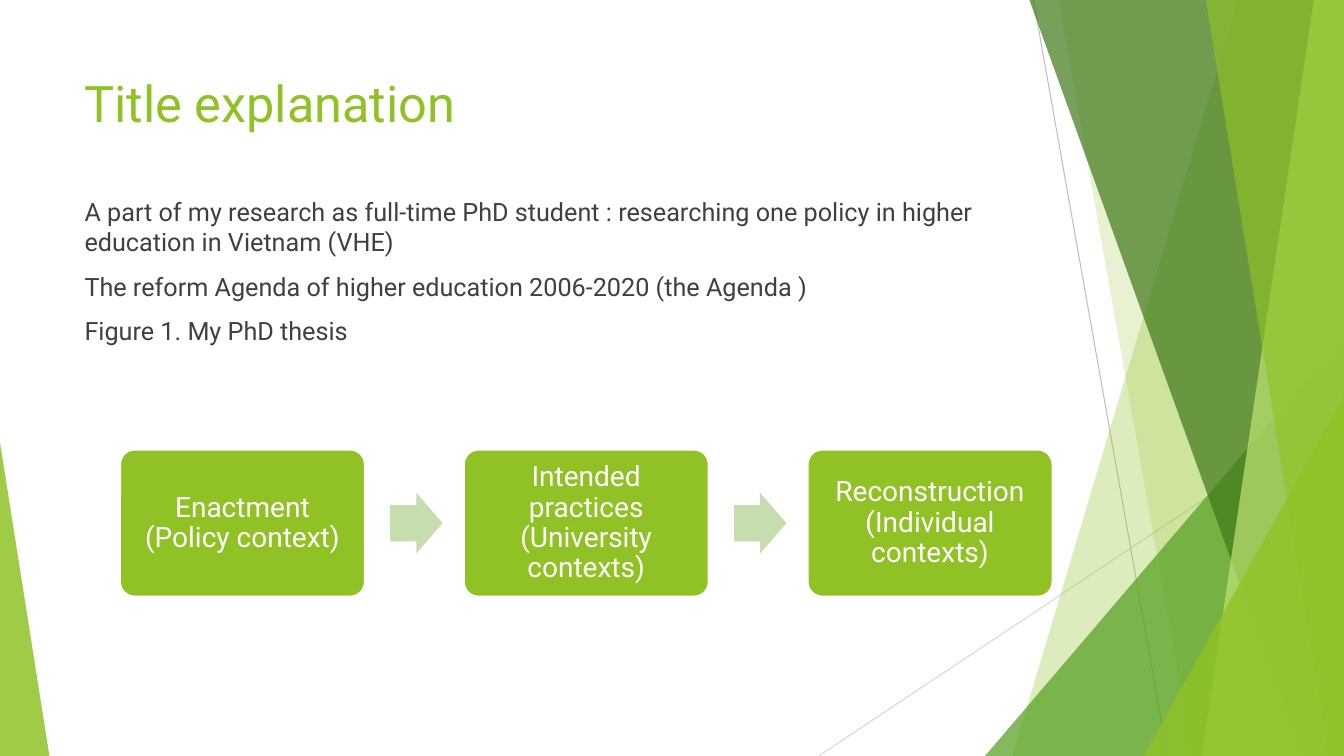
import pptx
import pptx.util
import pptx.dml.color
import pptx.enum.shapes
import pptx.enum.text
import pptx.oxml.ns
import lxml.etree

Inches = pptx.util.Inches
Pt = pptx.util.Pt
SHAPE = pptx.enum.shapes.MSO_SHAPE
ALIGN = pptx.enum.text.PP_ALIGN
ANCHOR = pptx.enum.text.MSO_ANCHOR
qn = pptx.oxml.ns.qn


def paint(fmt, color, alpha=100):
    """Solid colour for a fill, with opacity in percent."""
    fmt.solid()
    fmt.fore_color.rgb = pptx.dml.color.RGBColor.from_string(color)
    if alpha < 100:
        clr = fmt._xPr.find(".//" + qn("a:srgbClr"))
        lxml.etree.SubElement(clr, qn("a:alpha")).set("val", str(alpha * 1000))


def write(s, lines, size, color, frame, para):
    """Fill a shape with paragraphs, using dicts of frame and paragraph formats."""
    tf = s.text_frame
    for name, value in frame.items():
        setattr(tf, name, value)
    for i, line in enumerate(lines):
        p = tf.paragraphs[0] if i == 0 else tf.add_paragraph()
        for name, value in para.items():
            setattr(p, name, value)
        r = p.add_run()
        r.text = line
        for name, value in {"name": "Roboto", "size": Pt(size)}.items():
            setattr(r.font, name, value)
        paint(r.font.fill, color)


prs = pptx.Presentation()
prs.slide_width, prs.slide_height = Inches(13.33), Inches(7.5)
slide = prs.slides.add_slide(prs.slide_layouts[6])
shapes = slide.shapes

# Thin background lines
for x1, y1, x2, y2, color in [(10.25, 0, 11.58, 7.5, "BFBFBF"),
                              (13.33, 4.03, 8.12, 7.5, "D9D9D9")]:
    s = shapes.add_connector(pptx.enum.shapes.MSO_CONNECTOR.STRAIGHT,
                             Inches(x1), Inches(y1), Inches(x2), Inches(y2))
    s.line.width = Pt(0.75)
    paint(s.line.fill, color)
    lxml.etree.SubElement(s._element.spPr, qn("a:effectLst"))

# Green facets: bands give top and bottom x of their left edge and run to the
# right slide edge; triangles give left, top, width, height and apex position
facets = [
    ("band", (12.28, 10.04), "90C226", 30),
    ("band", (10.5, 11.83), "90C226", 20),
    ("triangle", (9.77, 3.33, 3.56, 4.17, 1), "54A021", 72),
    ("band", (10.21, 12.91), "3F7819", 70),
    ("band", (13.03, 11.92), "C0E474", 70),
    ("band", (11.96, 13.18), "90C226", 65),
    ("triangle", (11.34, 3.93, 1.99, 3.57, 1), "90C226", 80),
    ("triangle", (0, 4.39, 0.49, 3.11, 0), "90C226", 85),
]
for kind, geometry, color, alpha in facets:
    if kind == "band":
        top, bottom = geometry
        outline = shapes.build_freeform(Inches(top), 0)
        outline.add_line_segments([(Inches(x), Inches(y)) for x, y in
                                   [(13.33, 0), (13.33, 7.5), (bottom, 7.5)]])
        s = outline.convert_to_shape()
    else:
        *box, apex = geometry
        s = shapes.add_shape(SHAPE.ISOSCELES_TRIANGLE, *map(Inches, box))
        s.adjustments[0] = apex
    s.shadow.inherit = False
    s.line.fill.background()
    paint(s.fill, color, alpha)

# Title and body text
s = shapes.add_textbox(Inches(0.74), Inches(0.67), Inches(9.4), Inches(1.44))
write(s, ["Title explanation"], 36, "90C226", {"word_wrap": True}, {})

s = shapes.add_textbox(Inches(0.74), Inches(1.9), Inches(9.4), Inches(4.24))
write(s, ["A part of my research as full-time PhD student : researching one policy "
          "in higher education in Vietnam (VHE)",
          "The reform Agenda of higher education 2006-2020 (the Agenda )",
          "Figure 1. My PhD thesis"],
      18, "404040", {"word_wrap": True}, {"space_before": Pt(10)})

# Process: three boxes joined by arrows
steps = ["Enactment (Policy context)",
         "Intended practices (University contexts)",
         "Reconstruction (Individual contexts)"]
inset = Inches(0.12)
step_frame = {"word_wrap": True, "vertical_anchor": ANCHOR.MIDDLE,
              "margin_left": inset, "margin_right": inset,
              "margin_top": inset, "margin_bottom": inset}
step_para = {"alignment": ALIGN.CENTER, "line_spacing": 0.9}
for i, step in enumerate(steps):
    left = 1.19 + 3.41 * i
    if i > 0:
        s = shapes.add_shape(SHAPE.RIGHT_ARROW, Inches(left - 0.73), Inches(4.89),
                             Inches(0.52), Inches(0.6))
        s.adjustments[0], s.adjustments[1] = 0.6, 0.5
        s.shadow.inherit = False
        s.line.fill.background()
        paint(s.fill, "C6DDAD")
    s = shapes.add_shape(SHAPE.ROUNDED_RECTANGLE, Inches(left), Inches(4.46),
                         Inches(2.43), Inches(1.46))
    s.adjustments[0] = 0.1
    s.shadow.inherit = False
    s.line.width = Pt(1.5)
    paint(s.line.fill, "FFFFFF")
    paint(s.fill, "90C226")
    write(s, [step], 20, "FFFFFF", step_frame, step_para)

prs.save("out.pptx")
